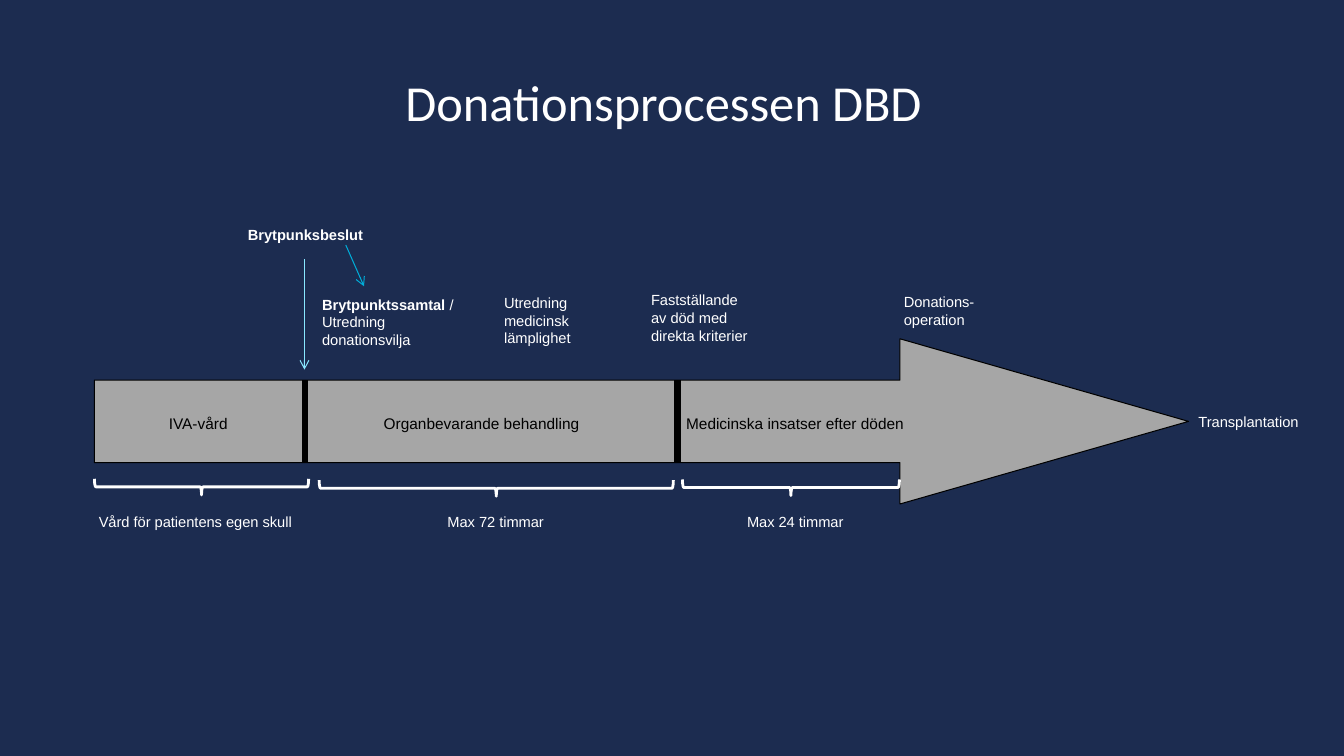
from pptx import Presentation
from pptx.dml.color import RGBColor
from pptx.enum.shapes import MSO_CONNECTOR, MSO_SHAPE
from pptx.enum.text import PP_ALIGN
from pptx.oxml.ns import qn
from pptx.util import Pt
from lxml.etree import SubElement

# Content: text, left, top, width, height (points)
TITLE = ("Donationsprocessen DBD", 282, 47, 384, 51)
STEPS = [
    ("Brytpunksbeslut", 170, 157.5, 120, 20),
    ("Brytpunktssamtal /Utredning\ndonationsvilja", 223, 207.5, 111, 45.5),
    ("Utredning\nmedicinsk\nlämplighet", 353, 206.5, 83.5, 46),
    ("Fastställande av död med direkta kriterier", 458, 204.5, 83.5, 58),
    ("Donations-\noperation", 638.5, 206, 85, 33),
    ("Transplantation", 849, 291, 108, 20),
]
BOLD_WORDS = ("Brytpunksbeslut", "Brytpunktssamtal")
# Text, left, width
PHASES = [
    ("IVA-vård", 113.5, 65.5),
    ("Organbevarande behandling", 267, 171),
    ("Medicinska insatser efter döden", 483, 185),
]
DURATIONS = [
    ("Vård för patientens egen skull", 63.5, 163.5),
    ("Max 72 timmar", 312.5, 146),
    ("Max 24 timmar", 526.5, 146),
]
# Left, right, top
BRACES = [(67.5, 220.5, 342), (228, 481, 343), (487.5, 642.5, 342.5)]
DIVIDERS = [218, 484]

# Geometry
ARROW = (67.5, 242, 781.5, 118)
HEAD_RATIO = 1.747
PHASE_TOP, DURATION_TOP, LABEL_HEIGHT = 292.5, 363, 20
BRACE_DEPTH = 11.5

THEME = {
    "background": "1C2C50", "light": "FFFFFF", "dark": "000000",
    "arrow": "A6A6A6", "pale_pointer": "89E8FF", "pointer": "00ADD8",
    "title_font": "Calibri", "body_font": "Arial",
    "title_size": 36, "label_size": 10.5, "phase_size": 11,
}


def color(name):
    return RGBColor.from_string(THEME[name])


def add_text(page, text, left, top, width, height, size="label_size",
             tint="light", font="body_font"):
    box = page.shapes.add_textbox(Pt(left), Pt(top), Pt(width), Pt(height))
    frame = box.text_frame
    frame.word_wrap = True
    frame.text = text
    for para in frame.paragraphs:
        bold_word = next((w for w in BOLD_WORDS if para.text.startswith(w)), "")
        if bold_word:
            rest = para.text[len(bold_word):]
            para.runs[0].text = bold_word
            para.runs[0].font.bold = True
            if rest:
                para.add_run().text = rest
        for span in para.runs:
            span.font.name = THEME[font]
            span.font.size = Pt(THEME[size])
            span.font.color.rgb = color(tint)
    return box


def add_line(page, start, end, tint, weight, arrowhead=False):
    line = page.shapes.add_connector(
        MSO_CONNECTOR.STRAIGHT, *(Pt(value) for value in start + end))
    line.line.color.rgb = color(tint)
    line.line.width = Pt(weight)
    if arrowhead:
        SubElement(line.line._get_or_add_ln(), qn("a:tailEnd"), type="arrow")
    SubElement(line._element.spPr, qn("a:effectLst"))


def add_outline(page, kind, left, top, width, height, tint, weight):
    shape = page.shapes.add_shape(kind, Pt(left), Pt(top), Pt(width), Pt(height))
    shape.shadow.inherit = False
    shape.fill.background()
    shape.line.color.rgb = color(tint)
    shape.line.width = Pt(weight)
    return shape


def main():
    deck = Presentation()
    deck.slide_width, deck.slide_height = Pt(960), Pt(540)
    page = deck.slides.add_slide(deck.slide_layouts[6])
    page.background.fill.solid()
    page.background.fill.fore_color.rgb = color("background")

    # Title
    title = add_text(page, *TITLE, size="title_size", font="title_font")
    title.text_frame.word_wrap = False
    title.text_frame.margin_left = title.text_frame.margin_right = Pt(3.6)
    title.text_frame.paragraphs[0].alignment = PP_ALIGN.CENTER

    # Process arrow with phase dividers
    arrow = add_outline(page, MSO_SHAPE.RIGHT_ARROW, *ARROW, "dark", 0.75)
    arrow.adjustments[0] = 0.5
    arrow.adjustments[1] = HEAD_RATIO
    arrow.fill.solid()
    arrow.fill.fore_color.rgb = color("arrow")
    shaft_top = ARROW[1] + ARROW[3] / 4
    shaft_bottom = shaft_top + ARROW[3] / 2
    for x in DIVIDERS:
        add_line(page, (x, shaft_top), (x, shaft_bottom), "dark", 4.5)

    # Labels
    for step in STEPS:
        add_text(page, *step)
    for text, left, width in PHASES:
        add_text(page, text, left, PHASE_TOP, width, LABEL_HEIGHT,
                 "phase_size", "dark")
    for text, left, width in DURATIONS:
        add_text(page, text, left, DURATION_TOP, width, LABEL_HEIGHT)

    # Pointers from the decision
    add_line(page, (217.5, 185), (217.5, 264), "pale_pointer", 0.75, True)
    add_line(page, (247, 175), (260, 204.5), "pointer", 0.75, True)

    # Braces: upright shapes turned about their centres
    for left, right, top in BRACES:
        span = right - left
        brace = add_outline(
            page, MSO_SHAPE.LEFT_BRACE, (left + right - BRACE_DEPTH) / 2,
            top + (BRACE_DEPTH - span) / 2, BRACE_DEPTH, span, "light", 2)
        brace.rotation = 270

    deck.save("out.pptx")


if __name__ == "__main__":
    main()
